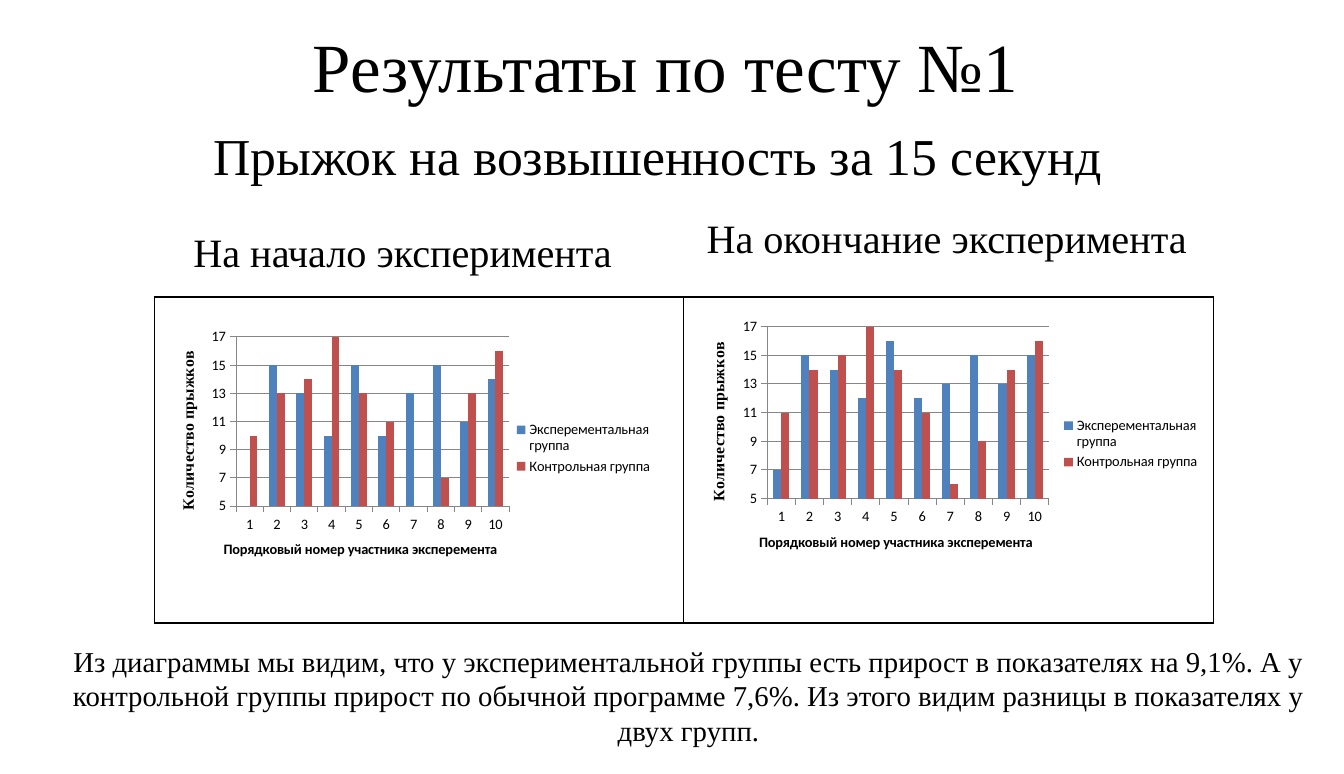
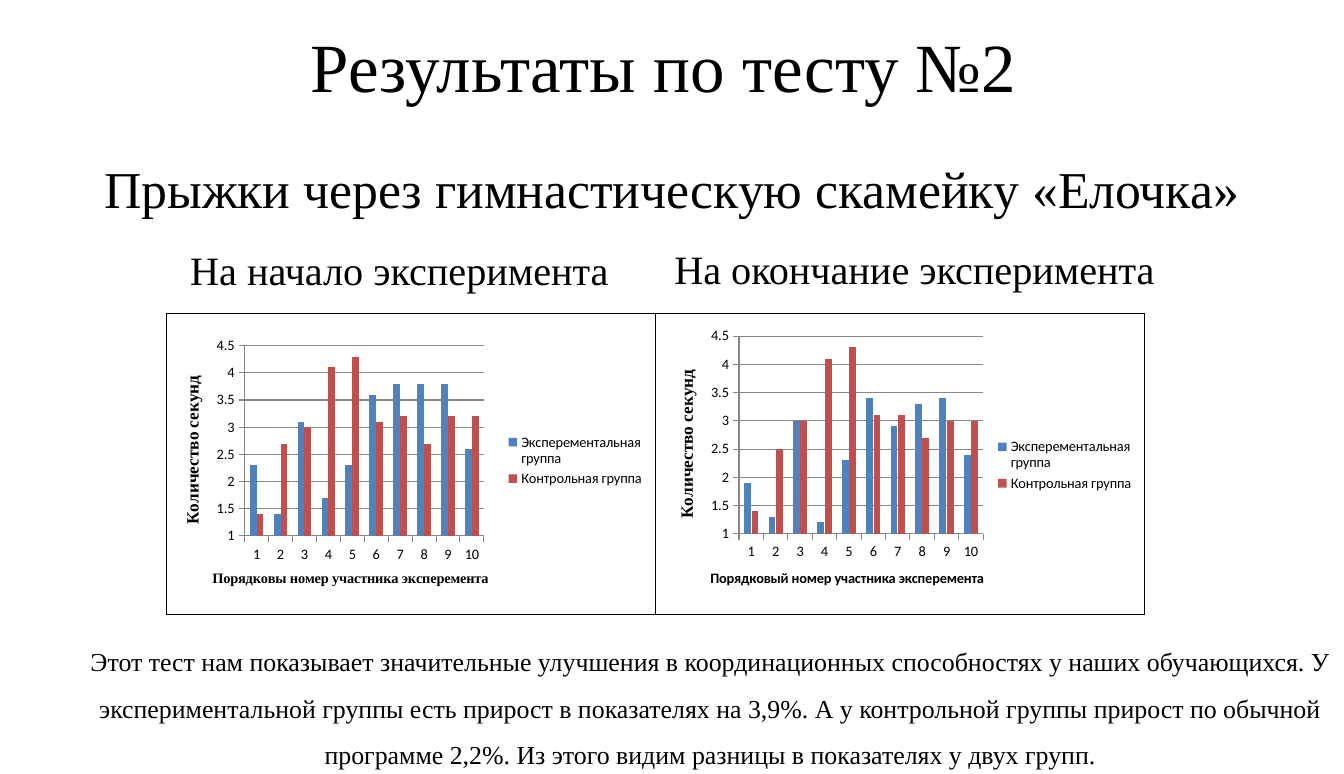
"""Build two slides comparing jump test results before and after the experiment."""
from dataclasses import dataclass

from lxml import etree
from pptx import Presentation
from pptx.chart.axis import CategoryAxis, ValueAxis
from pptx.chart.chart import Chart
from pptx.chart.data import CategoryChartData
from pptx.dml.color import RGBColor
from pptx.enum.chart import XL_CHART_TYPE, XL_LEGEND_POSITION
from pptx.enum.text import MSO_ANCHOR, PP_ALIGN
from pptx.oxml.ns import qn
from pptx.slide import Slide
from pptx.util import Inches, Pt

CLUSTERED = XL_CHART_TYPE.COLUMN_CLUSTERED
LEGEND_RIGHT = XL_LEGEND_POSITION.RIGHT
MIDDLE, TOP = MSO_ANCHOR.MIDDLE, MSO_ANCHOR.TOP
CENTER, LEFT = PP_ALIGN.CENTER, PP_ALIGN.LEFT

SLIDE_WIDTH, SLIDE_HEIGHT = Inches(12.99), Inches(7.48)
GROUPS = ("Эксперементальная группа", "Контрольная группа")
PARTICIPANTS = [str(number) for number in range(1, 11)]
PARTICIPANT_AXIS = "Порядковый номер участника эксперемента"
HEADINGS = ("На начало эксперимента", "На окончание эксперимента")


@dataclass(frozen=True)
class Theme:
    """Colours, fonts and type sizes of the presentation."""

    text: RGBColor = RGBColor(0, 0, 0)
    grid: RGBColor = RGBColor(0x86, 0x86, 0x86)
    series: tuple[RGBColor, ...] = (RGBColor(0x4F, 0x81, 0xBD), RGBColor(0xC0, 0x50, 0x4D))
    serif: str = "Times New Roman"
    sans: str = "Calibri"
    title: int = 48
    subtitle: int = 36
    heading: int = 28
    chart: int = 10


THEME = Theme()


@dataclass(frozen=True)
class Box:
    """An area in percent of the slide's width and height."""

    left: float
    top: float
    width: float
    height: float

    def lengths(self) -> tuple[int, int, int, int]:
        """Return left, top, width and height in slide units."""
        return (
            round(SLIDE_WIDTH * self.left / 100),
            round(SLIDE_HEIGHT * self.top / 100),
            round(SLIDE_WIDTH * self.width / 100),
            round(SLIDE_HEIGHT * self.height / 100),
        )


@dataclass(frozen=True)
class TextStyle:
    """Type size and paragraph settings of a text box."""

    size: int
    align: PP_ALIGN = CENTER
    anchor: MSO_ANCHOR = TOP
    inset: tuple[float, float] = (0.1, 0.05)
    space_before: float = 0
    line_spacing: float = 1.0
    indent: float = 0


TITLE = TextStyle(THEME.title, anchor=MIDDLE, inset=(0.12, 0.06))
SUBTITLE = TextStyle(THEME.subtitle, inset=(0.12, 0.06), space_before=7.2)
HEADING = TextStyle(THEME.heading, align=LEFT)


@dataclass(frozen=True)
class Scale:
    """Range and title of a value axis."""

    title: str
    title_size: int
    minimum: float
    maximum: float
    step: float


@dataclass(frozen=True)
class Results:
    """One chart: its place, inner plot area and values for both groups."""

    box: Box
    plot: tuple[float, float, float, float]
    values: tuple[tuple[float, ...], tuple[float, ...]]
    overlap: int = 0
    axis_title: str = PARTICIPANT_AXIS
    axis_font: str = THEME.sans


@dataclass(frozen=True)
class TestSlide:
    """Everything that differs between the test slides."""

    title: str
    title_box: Box
    subtitle: str
    subtitle_box: Box
    heading_boxes: tuple[Box, Box]
    frame: Box
    scale: Scale
    results: tuple[Results, Results]
    summary: str
    summary_box: Box
    summary_style: TextStyle


TESTS = (
    TestSlide(
        title="Результаты по тесту №1",
        title_box=Box(4.54, 0, 90, 16.71),
        subtitle="Прыжок на возвышенность за 15 секунд",
        subtitle_box=Box(3.93, 15.24, 90, 81.02),
        heading_boxes=(Box(13.63, 28.74, 33.1, 7.62), Box(51.81, 26.87, 38.41, 7.62)),
        frame=Box(11.47, 38.37, 78.83, 42.11),
        scale=Scale("Количество прыжков", 11, 5, 17, 2),
        results=(
            Results(
                Box(12.39, 41.58, 36.95, 32.62), (0.14, 0.06, 0.55, 0.67),
                ((5, 15, 13, 10, 15, 10, 13, 15, 11, 14), (10, 13, 14, 17, 13, 11, 4, 7, 13, 16)),
            ),
            Results(
                Box(51.27, 40.51, 38.8, 33.69), (0.15, 0.05, 0.54, 0.66),
                ((7, 15, 14, 12, 16, 12, 13, 15, 13, 15), (11, 14, 15, 17, 14, 11, 6, 9, 14, 16)),
            ),
        ),
        summary="Из диаграммы мы видим, что у экспериментальной группы есть прирост "
        "в показателях на 9,1%. А у контрольной группы прирост по обычной программе 7,6%. "
        "Из этого видим разницы в показателях у двух групп.",
        summary_box=Box(4.54, 82.49, 93.38, 14.84),
        summary_style=TextStyle(20),
    ),
    TestSlide(
        title="Результаты по тесту №2",
        title_box=Box(4.39, 0, 90, 16.71),
        subtitle="Прыжки через гимнастическую скамейку «Елочка»",
        subtitle_box=Box(5, 19.52, 90, 69.92),
        heading_boxes=(Box(13.39, 31.02, 33.1, 7.62), Box(49.42, 30.88, 38.18, 7.62)),
        frame=Box(12.39, 40.51, 72.75, 38.9),
        scale=Scale("Количество секунд", 12, 1, 4.5, 0.5),
        results=(
            Results(
                Box(12.39, 42.65, 36.34, 33.69), (0.16, 0.06, 0.49, 0.73),
                ((2.3, 1.4, 3.1, 1.7, 2.3, 3.6, 3.8, 3.8, 3.8, 2.6),
                 (1.4, 2.7, 3, 4.1, 4.3, 3.1, 3.2, 2.7, 3.2, 3.2)),
                axis_title="Порядковы номер участника эксперемента",
                axis_font=THEME.serif,
            ),
            Results(
                Box(48.81, 41.58, 36.34, 37.03), (0.17, 0.05, 0.5, 0.69),
                ((1.9, 1.3, 3, 1.2, 2.3, 3.4, 2.9, 3.3, 3.4, 2.4),
                 (1.4, 2.5, 3, 4.1, 4.3, 3.1, 3.1, 2.7, 3, 3)),
                overlap=-10,
            ),
        ),
        summary="Этот тест нам показывает значительные улучшения в координационных "
        "способностях у наших обучающихся. У экспериментальной группы есть прирост "
        "в показателях на 3,9%. А у контрольной группы прирост по обычной программе 2,2%. "
        "Из этого видим разницы в показателях у двух групп.",
        summary_box=Box(0, 80.75, 100, 19.52),
        summary_style=TextStyle(18, line_spacing=1.5, indent=0.74),
    ),
)


def add_text(slide: Slide, text: str, box: Box, style: TextStyle) -> None:
    """Add a wrapped text box with one paragraph."""
    text_frame = slide.shapes.add_textbox(*box.lengths()).text_frame
    text_frame.word_wrap = True
    text_frame.vertical_anchor = style.anchor
    text_frame.margin_left = text_frame.margin_right = Inches(style.inset[0])
    text_frame.margin_top = text_frame.margin_bottom = Inches(style.inset[1])
    text_frame.text = text
    paragraph = text_frame.paragraphs[0]
    paragraph.alignment = style.align
    paragraph.space_before = Pt(style.space_before)
    paragraph.line_spacing = style.line_spacing
    if style.indent:
        paragraph._p.get_or_add_pPr().set("marL", str(Inches(style.indent)))
    font = paragraph.runs[0].font
    font.name, font.size = THEME.serif, Pt(style.size)
    font.color.rgb = THEME.text


def add_frame(slide: Slide, box: Box) -> None:
    """Add the empty bordered table of two cells behind the charts."""
    table = slide.shapes.add_table(1, 2, *box.lengths()).table
    table.first_row = table.horz_banding = False
    for cell in table.iter_cells():
        properties = cell._tc.get_or_add_tcPr()
        for side in ("a:lnL", "a:lnR", "a:lnT", "a:lnB"):
            line = etree.SubElement(properties, qn(side), w=str(Pt(1)))
            fill = etree.SubElement(line, qn("a:solidFill"))
            etree.SubElement(fill, qn("a:srgbClr"), val=str(THEME.text))
        cell.fill.background()


def style_axis(axis: CategoryAxis | ValueAxis, title: str, font_name: str, size: int) -> None:
    """Title an axis in bold and colour its line."""
    axis.format.line.color.rgb = THEME.grid
    text_frame = axis.axis_title.text_frame
    text_frame.text = title
    font = text_frame.paragraphs[0].runs[0].font
    font.name, font.size, font.bold = font_name, Pt(size), True
    font.color.rgb = THEME.text


def set_plot_area(chart: Chart, shares: tuple[float, float, float, float]) -> None:
    """Fix the inner plot area in shares of the chart's size."""
    plot_area = chart.element.find(".//" + qn("c:plotArea"))
    for existing in plot_area.findall(qn("c:layout")):
        plot_area.remove(existing)
    layout = etree.Element(qn("c:layout"))
    manual = etree.SubElement(layout, qn("c:manualLayout"))
    settings = {"layoutTarget": "inner", "xMode": "edge", "yMode": "edge"}
    settings.update(zip("xywh", map(str, shares)))
    for name, value in settings.items():
        etree.SubElement(manual, qn(f"c:{name}"), val=value)
    plot_area.insert(0, layout)


def add_results_chart(slide: Slide, results: Results, scale: Scale) -> None:
    """Add a column chart of both groups."""
    data = CategoryChartData()
    data.categories = PARTICIPANTS
    for group, values in zip(GROUPS, results.values):
        data.add_series(group, values)
    chart = slide.shapes.add_chart(CLUSTERED, *results.box.lengths(), data).chart
    chart.has_title = False
    chart.font.name, chart.font.size = THEME.sans, Pt(THEME.chart)
    chart.font.color.rgb = THEME.text
    chart.has_legend = True
    chart.legend.position = LEGEND_RIGHT
    chart.legend.include_in_layout = False
    plot = chart.plots[0]
    plot.vary_by_categories = False
    plot.gap_width, plot.overlap = 150, results.overlap
    for series, color in zip(plot.series, THEME.series):
        series.format.fill.solid()
        series.format.fill.fore_color.rgb = color
    style_axis(chart.category_axis, results.axis_title, results.axis_font, THEME.chart)
    value_axis = chart.value_axis
    style_axis(value_axis, scale.title, THEME.serif, scale.title_size)
    value_axis.minimum_scale, value_axis.maximum_scale = scale.minimum, scale.maximum
    value_axis.major_unit = scale.step
    value_axis.major_gridlines.format.line.color.rgb = THEME.grid
    set_plot_area(chart, results.plot)


def add_test_slide(slide: Slide, test: TestSlide) -> None:
    """Fill a blank slide with one test's texts, frame and charts."""
    add_text(slide, test.title, test.title_box, TITLE)
    add_text(slide, test.subtitle, test.subtitle_box, SUBTITLE)
    add_frame(slide, test.frame)
    for results in test.results:
        add_results_chart(slide, results, test.scale)
    for heading, box in zip(HEADINGS, test.heading_boxes):
        add_text(slide, heading, box, HEADING)
    add_text(slide, test.summary, test.summary_box, test.summary_style)


def main() -> None:
    """Build and save the presentation."""
    presentation = Presentation()
    presentation.slide_width, presentation.slide_height = SLIDE_WIDTH, SLIDE_HEIGHT
    blank = presentation.slide_layouts[6]
    for test in TESTS:
        add_test_slide(presentation.slides.add_slide(blank), test)
    presentation.save("out.pptx")


if __name__ == "__main__":
    main()
